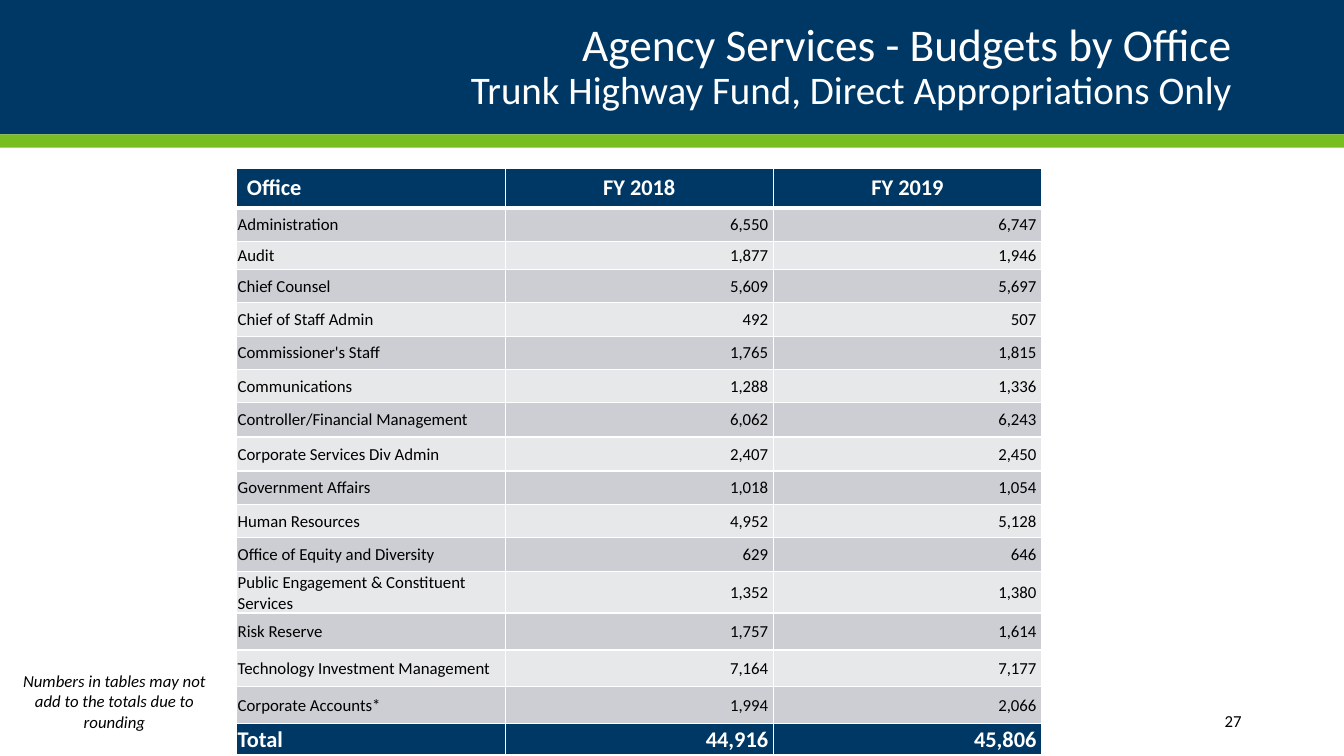
from typing import NamedTuple

from lxml.etree import SubElement
from pptx import Presentation
from pptx.dml.color import RGBColor
from pptx.enum.shapes import MSO_SHAPE
from pptx.enum.text import MSO_ANCHOR, PP_ALIGN
from pptx.oxml.ns import qn
from pptx.util import Cm, Pt

COLORS = {
    "navy": "003865",
    "green": "78BE21",
    "white": "FFFFFF",
    "black": "000000",
    "dark band": "CCCED3",
    "light band": "E7E8EA",
}
FONT = "Calibri"
PAGE_WIDTH = 33.87


class Office(NamedTuple):
    name: str
    fy2018: int
    fy2019: int
    height: float = 0.84


class Bar(NamedTuple):
    top: float
    height: float
    color: str


BARS = [Bar(0, 3.39, "navy"), Bar(3.39, 0.33, "green")]
OFFICES = [
    Office("Administration", 6550, 6747),
    Office("Audit", 1877, 1946, 0.71),
    Office("Chief Counsel", 5609, 5697),
    Office("Chief of Staff Admin", 492, 507),
    Office("Commissioner's Staff", 1765, 1815),
    Office("Communications", 1288, 1336),
    Office("Controller/Financial Management", 6062, 6243, 0.86),
    Office("Corporate Services Div Admin", 2407, 2450, 0.86),
    Office("Government Affairs", 1018, 1054),
    Office("Human Resources", 4952, 5128),
    Office("Office of Equity and Diversity", 629, 646, 0.86),
    Office("Public Engagement & Constituent Services", 1352, 1380, 0.86),
    Office("Risk Reserve", 1757, 1614, 0.93),
    Office("Technology Investment Management", 7164, 7177, 0.93),
    Office("Corporate Accounts*", 1994, 2066, 0.93),
]
TOTAL = Office("Total", 44916, 45806, 0.79)


def rgb(name: str) -> RGBColor:
    return RGBColor.from_string(COLORS[name])


def add_span(para, text: str, *, size: float = 12, color: str = "black",
             bold: bool = False, italic: bool = False) -> None:
    span = para.add_run()
    span.text = text
    span.font.name = FONT
    span.font.size = Pt(size)
    span.font.color.rgb = rgb(color)
    span.font.bold = bold
    span.font.italic = italic


def add_bar(page, bar: Bar) -> None:
    shape = page.shapes.add_shape(MSO_SHAPE.RECTANGLE, 0, Cm(bar.top), Cm(PAGE_WIDTH), Cm(bar.height))
    shape.shadow.inherit = False
    shape.fill.solid()
    shape.fill.fore_color.rgb = rgb(bar.color)
    shape.line.fill.background()


def add_box(page, left: float, top: float, width: float, height: float, align: PP_ALIGN):
    box = page.shapes.add_textbox(Cm(left), Cm(top), Cm(width), Cm(height))
    box.text_frame.word_wrap = True
    box.text_frame.vertical_anchor = MSO_ANCHOR.MIDDLE
    box.text_frame.paragraphs[0].alignment = align
    return box


def set_borders(cell, *, top: float = 1, bottom: float = 1) -> None:
    properties = cell._tc.get_or_add_tcPr()
    sides = {"a:lnL": 1, "a:lnR": 1, "a:lnT": top, "a:lnB": bottom}
    for position, (tag, width) in enumerate(sides.items()):
        line = SubElement(properties, qn(tag), w=str(Pt(width)))
        fill = SubElement(line, qn("a:solidFill"))
        SubElement(fill, qn("a:srgbClr"), val=COLORS["white"])
        properties.insert(position, line)


def fill_cell(cell, text: str, *, fill: str, align: PP_ALIGN, **style) -> None:
    cell.fill.solid()
    cell.fill.fore_color.rgb = rgb(fill)
    cell.vertical_anchor = MSO_ANCHOR.MIDDLE
    para = cell.text_frame.paragraphs[0]
    para.alignment = align
    add_span(para, text, **style)


def fill_office(row, office: Office, *, fill: str, top: float = 1, **style) -> None:
    row.height = Cm(office.height)
    texts = [office.name, f"{office.fy2018:,}", f"{office.fy2019:,}"]
    for column, (cell, text) in enumerate(zip(row.cells, texts)):
        cell.margin_left = cell.margin_top = Cm(0.02)
        cell.margin_right = Cm(0.13 if column else 0.02)
        cell.margin_bottom = 0
        align = PP_ALIGN.RIGHT if column else PP_ALIGN.LEFT
        fill_cell(cell, text, fill=fill, align=align, **style)
        set_borders(cell, top=top)


def add_budget_table(page) -> None:
    frame = page.shapes.add_table(len(OFFICES) + 2, 3, Cm(5.97), Cm(4.25), Cm(20.28), Cm(14.5))
    table = frame.table
    table.first_row = table.horz_banding = False
    for column in table.columns:
        column.width = Cm(6.76)
    header, *office_rows, total_row = table.rows
    strong = {"fill": "navy", "size": 16, "color": "white", "bold": True}

    header.height = Cm(0.99)
    for cell, text in zip(header.cells, ["Office", "FY 2018", "FY 2019"]):
        align = PP_ALIGN.LEFT if text == "Office" else PP_ALIGN.CENTER
        fill_cell(cell, text, align=align, **strong)
        set_borders(cell, bottom=3)
    for index, (row, office) in enumerate(zip(office_rows, OFFICES)):
        band = "light band" if index % 2 else "dark band"
        fill_office(row, office, fill=band, top=1 if index else 3)
    fill_office(total_row, TOTAL, **strong)


def main() -> None:
    deck = Presentation()
    deck.slide_width, deck.slide_height = Cm(PAGE_WIDTH), Cm(19.05)
    page = deck.slides.add_slide(deck.slide_layouts[6])

    # Header band
    for bar in BARS:
        add_bar(page, bar)

    # Title
    title = add_box(page, 2.33, 0.43, 29.21, 2.54, PP_ALIGN.RIGHT)
    title.text_frame.margin_right = Cm(0.5)
    para = title.text_frame.paragraphs[0]
    para.line_spacing = 0.9
    add_span(para, "Agency Services - Budgets by Office", size=32.4, color="white")
    para.add_line_break()
    add_span(para, "Trunk Highway Fund, Direct Appropriations Only", size=27.9, color="white")

    # Budgets
    add_budget_table(page)

    # Page number and rounding note
    number = add_box(page, 27.48, 17.65, 4.06, 1.02, PP_ALIGN.RIGHT)
    add_span(number.text_frame.paragraphs[0], "27")
    note = add_box(page, 0, 16.92, 5.77, 1.5, PP_ALIGN.CENTER)
    add_span(note.text_frame.paragraphs[0],
             "Numbers in tables may not add to the totals due to rounding", italic=True)

    deck.save("out.pptx")


if __name__ == "__main__":
    main()
